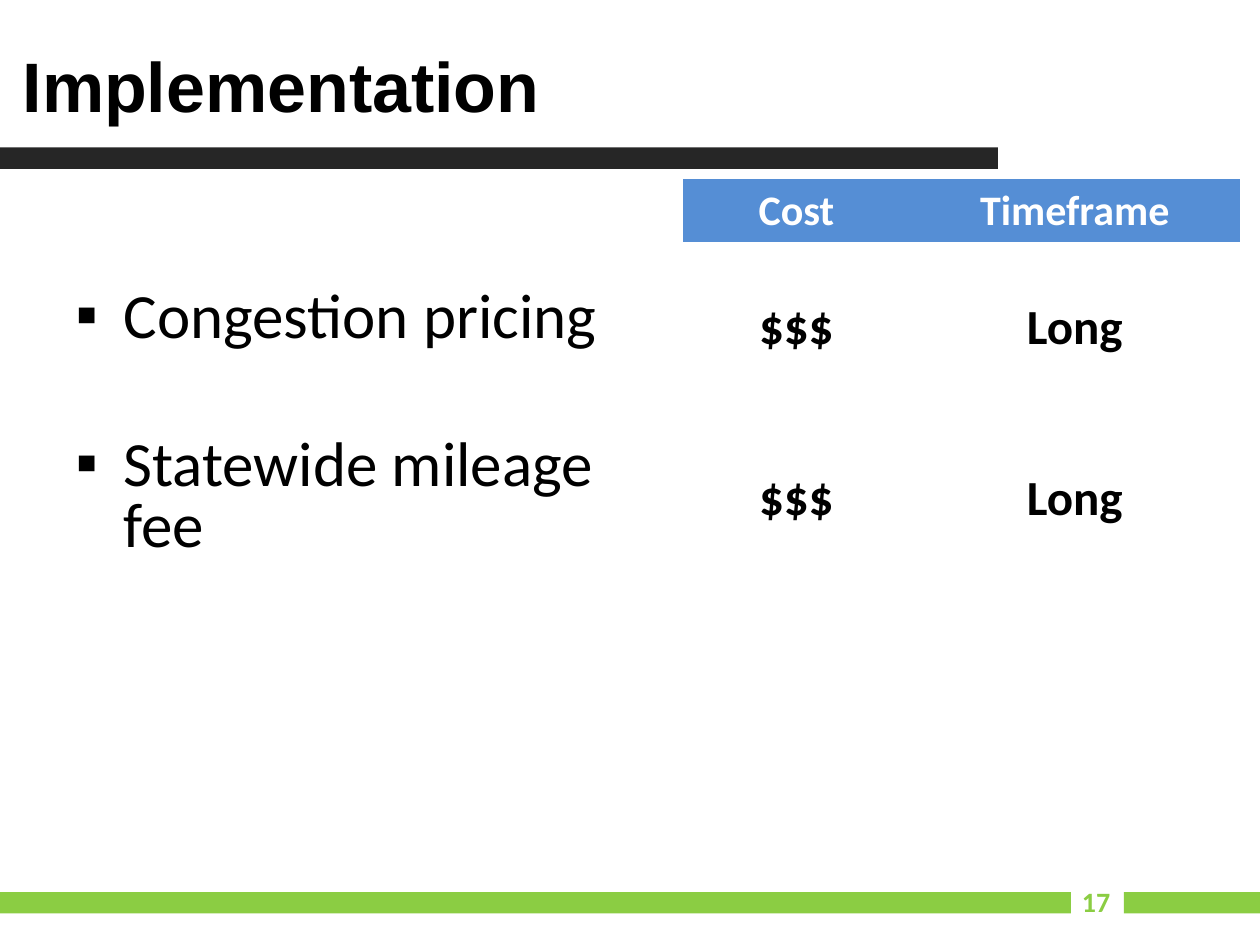
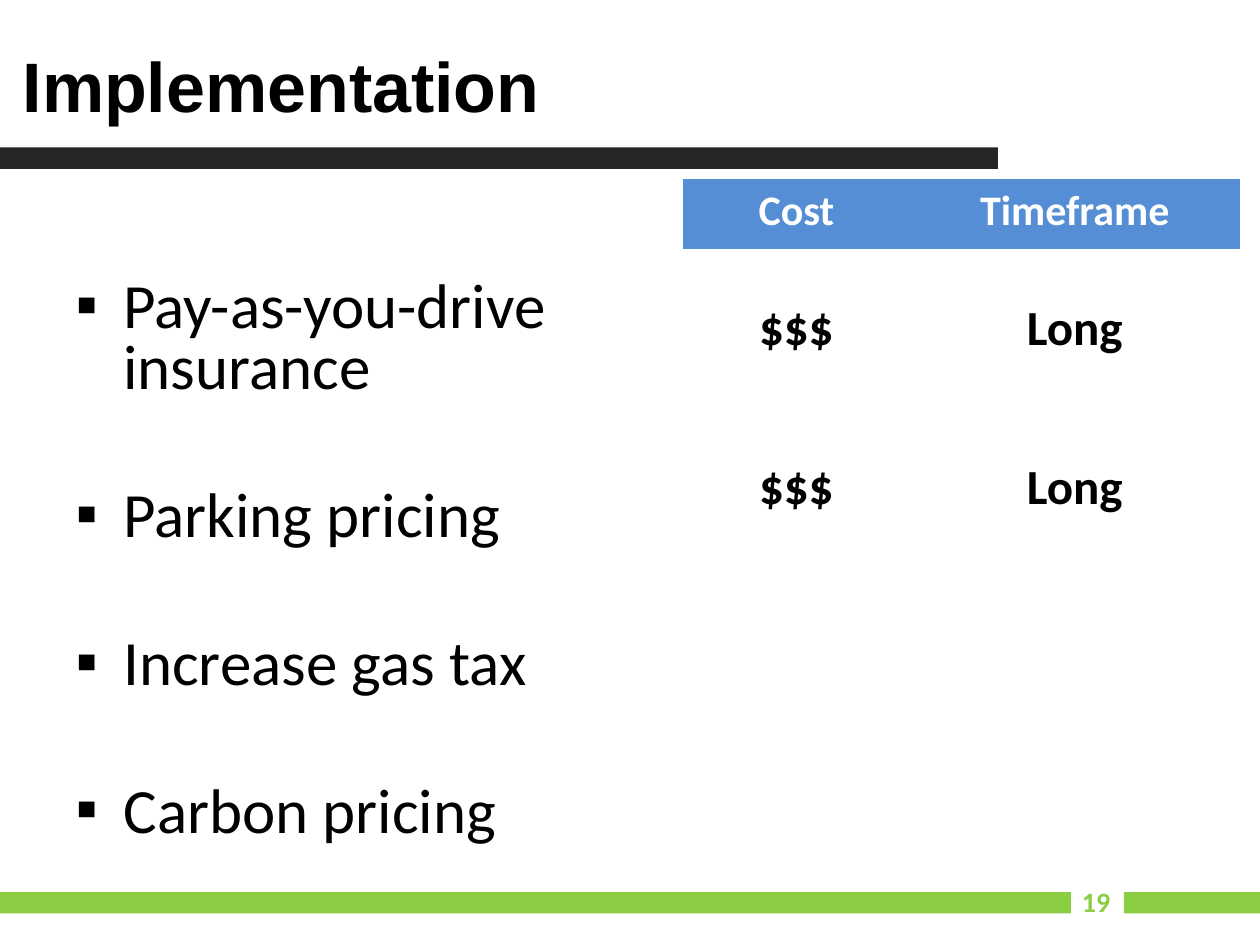
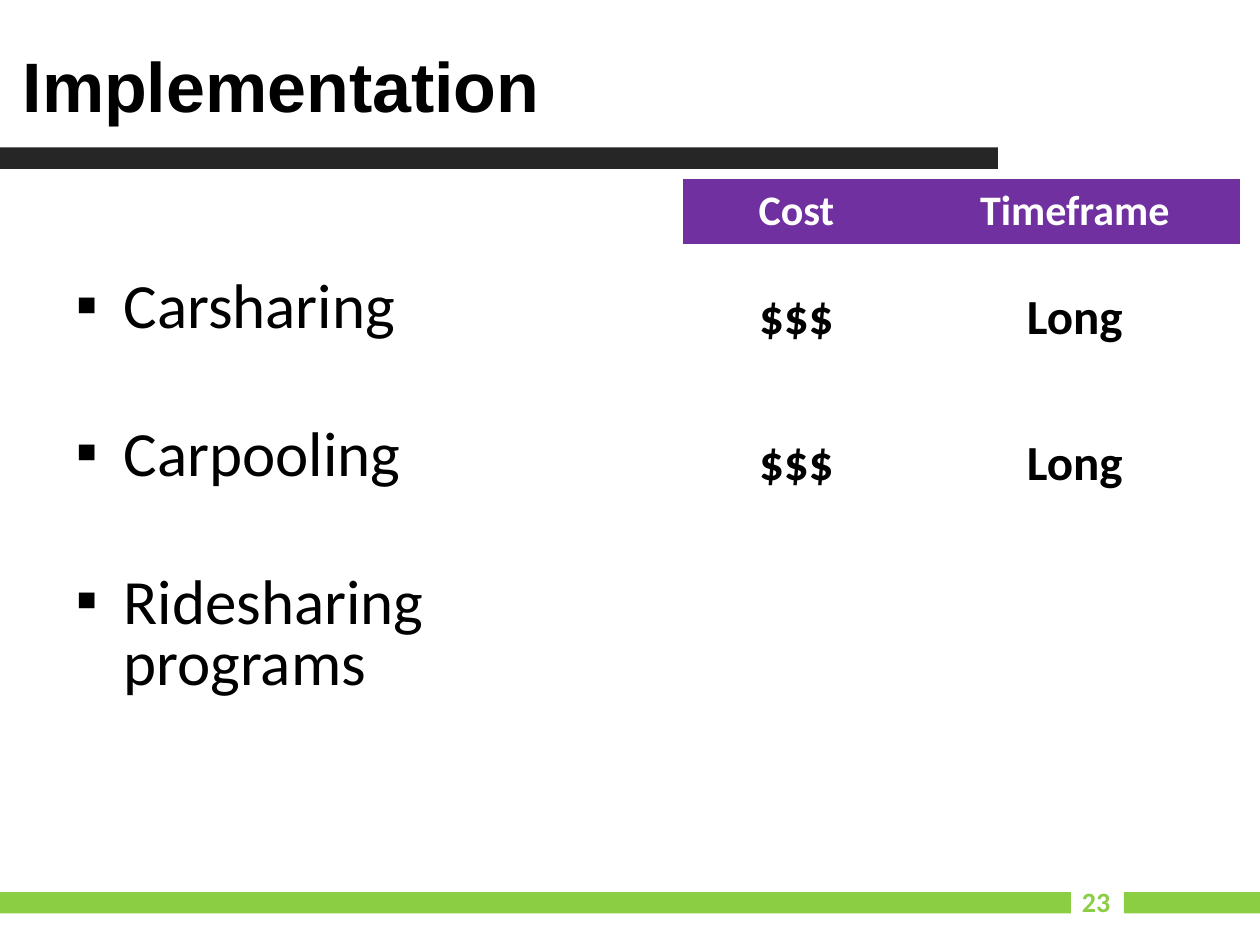
from lxml import etree
from pptx import Presentation
from pptx.dml.color import RGBColor
from pptx.enum.shapes import MSO_SHAPE
from pptx.enum.text import MSO_ANCHOR as ANCHOR, MSO_AUTO_SIZE as AUTO_SIZE, PP_ALIGN as ALIGN
from pptx.oxml.ns import qn
from pptx.util import Inches, Pt

# Shared colours and text formats
BLACK, WHITE, CHARCOAL, GREEN = "000000", "FFFFFF", "262626", "8BCD43"
BLUE, PURPLE = "558ED5", "7030A0"
TITLE = {"name": "Arial", "size": Pt(40), "bold": True}
STRATEGY = {"name": "Calibri", "size": Pt(36), "bold": False}
HEADING = {"name": "Calibri", "size": Pt(24), "bold": True}
RATING = {"name": "Calibri", "size": Pt(28), "bold": True}
PAGE_NUMBER = {"name": "Calibri", "size": Pt(16), "bold": True}
PLAIN_TABLE = "{2D5ABB26-0587-4C30-8999-92F81FD0307C}"
COLUMN_WIDTHS = [1.8, 2.62]
RATINGS = [("Cost", "Timeframe"), ("$$$", "Long"), ("$$$", "Long")]

# Left, top, width, height, colour
BANDS = [
    (0, 1.17, 7.92, 0.17, CHARCOAL),
    (0, 7.08, 8.5, 0.17, GREEN),
    (8.92, 7.08, 1.08, 0.17, GREEN),
]

SLIDES = [
    {"page": "17", "accent": BLUE, "header": 0.5, "row": 1.36, "rows": 3,
     "body": (2.25, 4.58),
     "strategies": ["Congestion pricing", "Statewide mileage fee"]},
    {"page": "19", "accent": BLUE, "header": 0.56, "row": 1.26, "rows": 4,
     "body": (2.17, 4.92),
     "strategies": ["Pay-as-you-drive insurance", "Parking pricing",
                    "Increase gas tax", "Carbon pricing"]},
    {"page": "23", "accent": PURPLE, "header": 0.52, "row": 1.16, "rows": 4,
     "body": (2.17, 4.92),
     "strategies": ["Carsharing", "Carpooling", "Ridesharing programs"]},
]


def paint(target, color):
    """Give a fill or a font a solid hex colour."""
    if hasattr(target, "solid"):
        target.solid()
        target.fore_color.rgb = RGBColor.from_string(color)
    else:
        target.color.rgb = RGBColor.from_string(color)


def write(paragraph, text, text_format, color, align=ALIGN.LEFT):
    run = paragraph.add_run()
    run.text = text
    paragraph.alignment = align
    for attribute, value in text_format.items():
        setattr(run.font, attribute, value)
    paint(run.font, color)


deck = Presentation()
deck.slide_width, deck.slide_height = Inches(10), Inches(7.5)
layout = deck.slide_layouts[1]

for content in SLIDES:
    slide = deck.slides.add_slide(layout)

    # Bands, placed once on the master
    if content is SLIDES[0]:
        for *box, color in BANDS:
            band = slide.shapes.add_shape(MSO_SHAPE.RECTANGLE, *map(Inches, box))
            band.shadow.inherit = False
            band.line.fill.background()
            paint(band.fill, color)
            deck.slide_master.shapes.element.insert(2, band.element)

    # Title
    title = slide.shapes.title
    title.left, title.top, title.width, title.height = map(Inches, (0.08, 0.17, 9, 1))
    title.text_frame.auto_size = AUTO_SIZE.NONE
    title.text_frame.vertical_anchor = ANCHOR.MIDDLE
    write(title.text_frame.paragraphs[0], "Implementation", TITLE, BLACK)

    # Page number
    page = slide.shapes.add_textbox(*map(Inches, (8.33, 6.95, 0.58, 0.4))).text_frame
    page.word_wrap = True
    page.vertical_anchor = ANCHOR.MIDDLE
    write(page.paragraphs[0], content["page"], PAGE_NUMBER, GREEN, ALIGN.RIGHT)

    # Cost and timeframe table
    heights = [content["header"]] + [content["row"]] * content["rows"]
    table = slide.shapes.add_table(
        len(heights), len(COLUMN_WIDTHS), Inches(5.42), Inches(1.42),
        Inches(sum(COLUMN_WIDTHS)), Inches(sum(heights))).table
    table.first_row = table.horz_banding = False
    table._tbl.find(".//" + qn("a:tableStyleId")).text = PLAIN_TABLE
    for column, width in zip(table.columns, COLUMN_WIDTHS):
        column.width = Inches(width)
    for row, height in zip(table.rows, heights):
        row.height = Inches(height)
    for row_index, ratings in enumerate(RATINGS):
        for column_index, rating in enumerate(ratings):
            cell = table.cell(row_index, column_index)
            paragraph = cell.text_frame.paragraphs[0]
            if row_index == 0:
                paint(cell.fill, content["accent"])
                write(paragraph, rating, HEADING, WHITE, ALIGN.CENTER)
            else:
                cell.fill.background()
                cell.vertical_anchor = ANCHOR.MIDDLE
                write(paragraph, rating, RATING, BLACK, ALIGN.CENTER)
    for row_index in range(len(RATINGS), len(heights)):
        for cell in table.rows[row_index].cells:
            cell.fill.background()

    # Strategy list
    strategies = slide.placeholders[1]
    top, height = content["body"]
    strategies.left, strategies.top = Inches(0.5), Inches(top)
    strategies.width, strategies.height = Inches(4.92), Inches(height)
    frame = strategies.text_frame
    frame.auto_size = AUTO_SIZE.NONE
    for index, strategy in enumerate(content["strategies"]):
        paragraph = frame.add_paragraph() if index else frame.paragraphs[0]
        paragraph.line_spacing = Pt(35)
        paragraph.space_before = Pt(49.5 if index else 0)
        properties = paragraph._p.get_or_add_pPr()
        properties.set("marL", str(Inches(0.38)))
        properties.set("indent", str(-Inches(0.38)))
        etree.SubElement(properties, qn("a:buFont"), typeface="Arial")
        etree.SubElement(properties, qn("a:buChar"), char="▪")
        write(paragraph, strategy, STRATEGY, BLACK)

deck.save("out.pptx")
